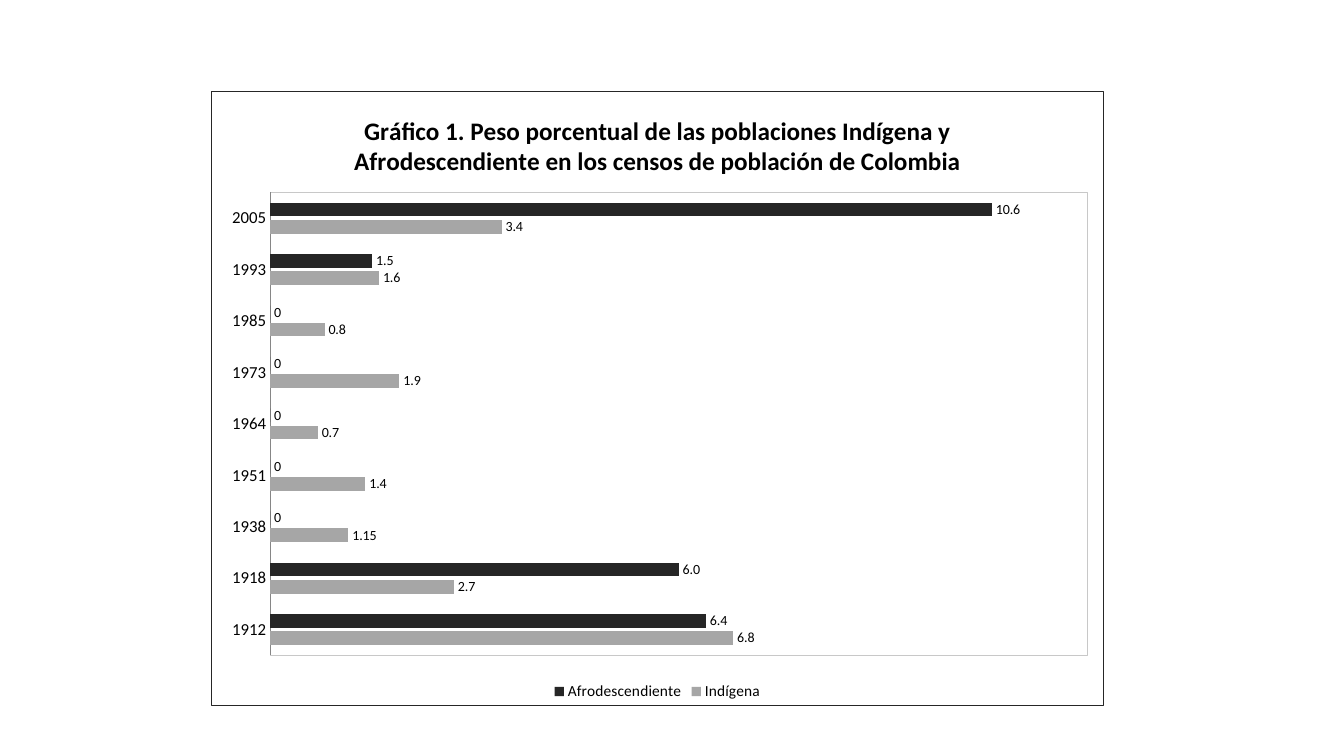
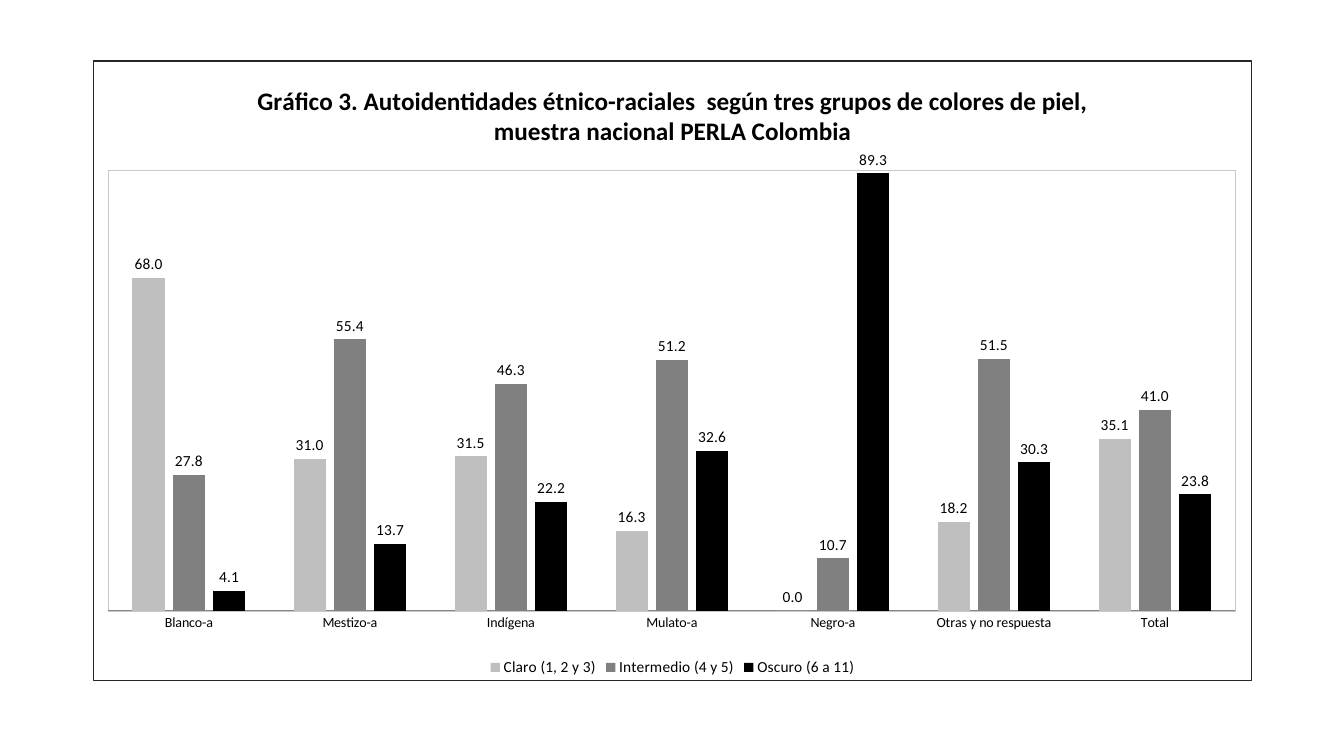
import pptx
import pptx.util
import pptx.oxml
import pptx.chart.data
import pptx.dml.color
import pptx.enum.chart

PX = 9144  # EMU in one px, 100 px to the inch
FONT = "Calibri"
COLORS = {
    "text": "000000",
    "border": "262626",
    "plot frame": "C8C8C8",
    "axis": "868686",
    "black": "000000",
    "charcoal": "262626",
    "gray": "808080",
    "mid gray": "A6A6A6",
    "light gray": "BFBFBF",
}
BORDER_PT, FRAME_PT = 0.75, 0.25

# Content: one dict per slide
CHARTS = [
    {
        "title": "Gráfico 1. Peso porcentual de las poblaciones Indígena y "
                 "Afrodescendiente en los censos de población de Colombia",
        "type": pptx.enum.chart.XL_CHART_TYPE.BAR_CLUSTERED,
        "box": (209, 90, 886, 610),
        "plot": (0.066, 0.165, 0.916, 0.754),
        "maximum": 12,
        "category size": 12,
        "label size": 10,
        "format": "General",
        "categories": ["1912", "1918", "1938", "1951", "1964",
                       "1973", "1985", "1993", "2005"],
        "series": [
            ("Indígena", "mid gray", [6.8, 2.7, 1.15, 1.4, 0.7, 1.9, 0.8, 1.6, 3.4], {}),
            ("Afrodescendiente", "charcoal", [6.4, 6, 0, 0, 0, 0, 0, 1.5, 10.6], {1: "6.0"}),
        ],
    },
    {
        "title": "Gráfico 3. Autoidentidades étnico-raciales  según tres grupos "
                 "de colores de piel, muestra nacional PERLA Colombia",
        "type": pptx.enum.chart.XL_CHART_TYPE.COLUMN_CLUSTERED,
        "box": (92, 60, 1150, 616),
        "plot": (0.013, 0.176, 0.973, 0.711),
        "maximum": 90,
        "category size": 10,
        "label size": 11,
        "format": "0.0",
        "categories": ["Blanco-a", "Mestizo-a", "Indígena", "Mulato-a",
                       "Negro-a", "Otras y no respuesta", "Total"],
        "series": [
            ("Claro (1, 2 y 3)", "light gray", [68, 31, 31.5, 16.3, 0, 18.2, 35.1], {}),
            ("Intermedio (4 y 5)", "gray", [27.8, 55.4, 46.3, 51.2, 10.7, 51.5, 41], {}),
            ("Oscuro (6 a 11)", "black", [4.1, 13.7, 22.2, 32.6, 89.3, 30.3, 23.8], {}),
        ],
    },
]


def rgb(name):
    return pptx.dml.color.RGBColor.from_string(COLORS[name])


def set_font(font, size, bold=False):
    font.name = FONT
    font.size = pptx.util.Pt(size)
    font.bold = bold
    font.color.rgb = rgb("text")


def write_text(frame, text, size=10, bold=False):
    run = frame.paragraphs[0].add_run()
    run.text = text
    set_font(run.font, size, bold)


def chart_xml(tag, content):
    return pptx.oxml.parse_xml(
        f'<c:{tag} xmlns:c="http://schemas.openxmlformats.org/drawingml/2006/chart"'
        f' xmlns:a="http://schemas.openxmlformats.org/drawingml/2006/main">{content}</c:{tag}>')


def outline(color, points):
    return chart_xml("spPr", f'<a:noFill/><a:ln w="{pptx.util.Pt(points)}"><a:solidFill>'
                             f'<a:srgbClr val="{COLORS[color]}"/></a:solidFill></a:ln>')


def place_plot(chart, fractions):
    """Fix the inner plot area and draw the two frames."""
    chart_root = chart._chartSpace
    plot_area = chart_root.chart.plotArea
    for layout in plot_area.findall(pptx.oxml.ns.qn("c:layout")):
        plot_area.remove(layout)
    parts = '<c:layoutTarget val="inner"/><c:xMode val="edge"/><c:yMode val="edge"/>'
    parts += "".join(f'<c:{key} val="{value}"/>' for key, value in zip("xywh", fractions))
    plot_area.insert(0, chart_xml("layout", f"<c:manualLayout>{parts}</c:manualLayout>"))
    plot_area.append(outline("plot frame", FRAME_PT))
    chart_root.chart.addnext(outline("border", BORDER_PT))


def style_axes(chart, content):
    no_tick = pptx.enum.chart.XL_TICK_MARK.NONE
    categories, values = chart.category_axis, chart.value_axis
    categories.major_tick_mark = categories.minor_tick_mark = no_tick
    categories.has_major_gridlines = False
    categories.format.line.color.rgb = rgb("axis")
    categories.format.line.width = pptx.util.Pt(BORDER_PT)
    set_font(categories.tick_labels.font, content["category size"])
    values.visible = False
    values.has_major_gridlines = False
    values.minimum_scale, values.maximum_scale = 0, content["maximum"]


def style_series(series, content, color, special_labels):
    outside = pptx.enum.chart.XL_LABEL_POSITION.OUTSIDE_END
    series.format.fill.solid()
    series.format.fill.fore_color.rgb = rgb(color)
    series.invert_if_negative = False
    labels = series.data_labels
    labels.show_value = True
    labels.position = outside
    labels.number_format = content["format"]
    labels.number_format_is_linked = False
    set_font(labels.font, content["label size"])
    for index, text in special_labels.items():
        label = series.points[index].data_label
        write_text(label.text_frame, text, size=content["label size"])
        label.position = outside


def add_chart_slide(deck, content):
    slide = deck.slides.add_slide(deck.slide_layouts[6])
    data = pptx.chart.data.CategoryChartData()
    data.categories = content["categories"]
    for name, _, values, _ in content["series"]:
        data.add_series(name, values)
    box = [length * PX for length in content["box"]]
    chart = slide.shapes.add_chart(content["type"], *box, data).chart
    set_font(chart.font, 10)

    # Title and legend
    chart.has_title = True
    write_text(chart.chart_title.text_frame, content["title"], size=18, bold=True)
    chart.has_legend = True
    chart.legend.position = pptx.enum.chart.XL_LEGEND_POSITION.BOTTOM
    chart.legend.include_in_layout = False
    set_font(chart.legend.font, 11)

    # Bars, axes and frames
    bars = chart.plots[0]
    bars.gap_width, bars.overlap = 150, -25
    bars.vary_by_categories = False
    for series, (_, color, _, special_labels) in zip(bars.series, content["series"]):
        style_series(series, content, color, special_labels)
    style_axes(chart, content)
    place_plot(chart, content["plot"])


def main():
    deck = pptx.Presentation()
    deck.slide_width, deck.slide_height = 1333 * PX, 750 * PX
    for content in CHARTS:
        add_chart_slide(deck, content)
    deck.save("out.pptx")


if __name__ == "__main__":
    main()
